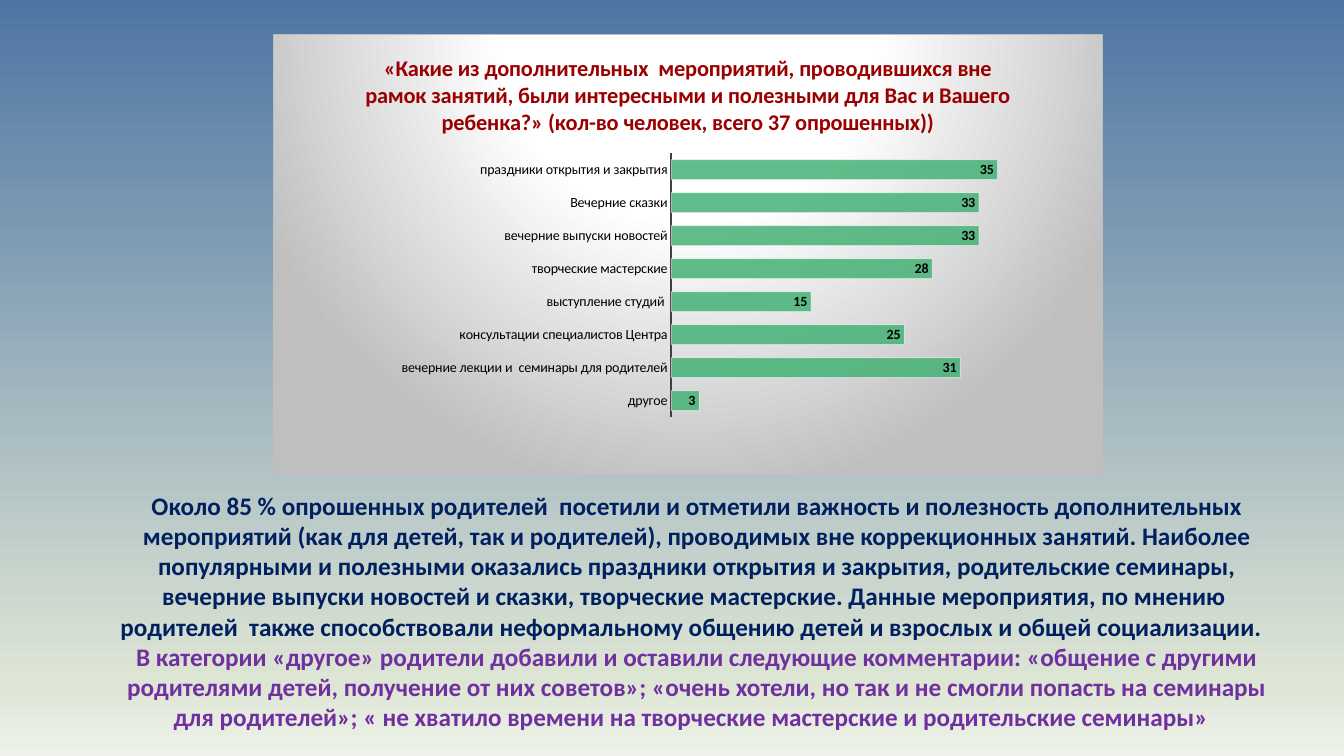
from lxml import etree
from pptx import Presentation
from pptx import util as u
from pptx.chart.data import CategoryChartData
from pptx.dml.color import RGBColor
from pptx.enum import chart as ch, text
from pptx.oxml import parse_xml
from pptx.oxml.ns import nsdecls, qn

# Content
TITLE = ("«Какие из дополнительных  мероприятий, проводившихся вне рамок занятий, "
         "были интересными и полезными для Вас и Вашего ребенка?» "
         "(кол-во человек, всего 37 опрошенных))")
VOTES = [
    ("другое", 3),
    ("вечерние лекции и  семинары для родителей", 31),
    ("консультации специалистов Центра", 25),
    ("выступление студий ", 15),
    ("творческие мастерские", 28),
    ("вечерние выпуски новостей", 33),
    ("Вечерние сказки", 33),
    ("праздники открытия и закрытия", 35),
]
NOTES = [
    ("Около 85 % опрошенных родителей  посетили и отметили важность и полезность "
     "дополнительных мероприятий (как для детей, так и родителей), проводимых вне "
     "коррекционных занятий. Наиболее популярными и полезными оказались праздники "
     "открытия и закрытия, родительские семинары, вечерние выпуски новостей и сказки, "
     "творческие мастерские. Данные мероприятия, по мнению  родителей  также "
     "способствовали неформальному общению детей и взрослых и общей социализации.  ",
     "navy"),
    ("В категории «другое» родители добавили и оставили следующие комментарии: "
     "«общение с другими родителями детей, получение от них советов»; «очень хотели, "
     "но так и не смогли попасть на семинары для родителей»; « не хватило времени на "
     "творческие мастерские и родительские семинары»  ", "violet"),
]


class Theme:
    face = "Calibri"
    color = {"navy": "002060", "violet": "7030A0", "red": "9A0000", "black": "000000",
             "green": "45B176", "axis": "404040", "white": "FFFFFF", "edge": "BFBFBF"}
    sky = [(0, "4E75A3"), (90, "DDE5D4"), (100, "EEF2EA")]
    glow = [(0, "FFFFFF"), (39, "FFFFFF"), (100, "BFBFBF")]
    head, body, label = 16, 18, 10


# Layout in px
SCALE = 914400 / 100.8
PAGE = (1344, 756)
CHART = (273, 34, 830, 441)
NOTE = (97, 485, 1200, 265)
PLOT = {"x": 0.48, "y": 0.27, "w": 0.45, "h": 0.6}


def emu(box):
    return [u.Emu(round(n * SCALE)) for n in box]


def rgb(name):
    return RGBColor.from_string(Theme.color[name])


def style(font, size, name, bold=False):
    font.name, font.size, font.bold = Theme.face, u.Pt(size), bold
    font.color.rgb = rgb(name)


def grad(stops, shade):
    marks = "".join(f'<a:gs pos="{pos * 1000}"><a:srgbClr val="{hue}"/></a:gs>'
                    for pos, hue in stops)
    return (f'<a:gradFill {nsdecls("a")} rotWithShape="1"><a:gsLst>{marks}</a:gsLst>'
            f'{shade}</a:gradFill>')


def fade(form, share):
    for hue in form.iter(qn("a:srgbClr")):
        etree.SubElement(hue, qn("a:alpha")).set("val", str(share * 1000))


deck = Presentation()
deck.slide_width, deck.slide_height = emu(PAGE)
slide = deck.slides.add_slide(deck.slide_layouts[6])

# Background
slide.background.fill.solid()
back = slide.element.find(".//" + qn("p:bgPr"))
back.replace(back[0], parse_xml(grad(Theme.sky, '<a:lin ang="5400000" scaled="0"/>')))

# Bar chart
data = CategoryChartData()
data.categories = [name for name, _ in VOTES]
data.add_series("Series 1", [count for _, count in VOTES])
chart = slide.shapes.add_chart(ch.XL_CHART_TYPE.BAR_CLUSTERED, *emu(CHART), data).chart
style(chart.font, Theme.label, "black")
chart.has_legend = False
chart.has_title = True
head = chart.chart_title.text_frame
head.text = TITLE
style(head.paragraphs[0].font, Theme.head, "red", True)
chart.chart_title.include_in_layout = False

# Axes
cats, vals = chart.category_axis, chart.value_axis
cats.major_tick_mark = ch.XL_TICK_MARK.NONE
cats.format.line.color.rgb = rgb("axis")
cats.format.line.width = u.Pt(1.5)
style(cats.tick_labels.font, Theme.label, "black")
vals.visible = vals.has_major_gridlines = False
vals.minimum_scale, vals.maximum_scale = 0, 40

# Bars and their labels
plot = chart.plots[0]
plot.gap_width = 65
plot.vary_by_categories = False
bars = plot.series[0]
bars.format.fill.solid()
bars.format.fill.fore_color.rgb = rgb("green")
bars.format.line.color.rgb = rgb("white")
bars.format.line.width = u.Pt(0.75)
form = bars.format.fill
shape = bars._element.find(qn("c:spPr"))
fade(shape.find(qn("a:solidFill")), 85)
fade(shape.find(qn("a:ln")), 50)
tags = bars.data_labels
tags.show_value = True
tags.position = ch.XL_LABEL_POSITION.INSIDE_END
style(tags.font, Theme.label, "black", True)

# Plot position and chart panel
area = chart.element.find(".//" + qn("c:plotArea"))
for old in area.findall(qn("c:layout")):
    area.remove(old)
modes = '<c:xMode val="edge"/><c:yMode val="edge"/>'
sizes = "".join(f'<c:{key} val="{val}"/>' for key, val in PLOT.items())
area.insert(0, parse_xml(
    f'<c:layout {nsdecls("c")}><c:manualLayout><c:layoutTarget val="inner"/>'
    f'{modes}{sizes}</c:manualLayout></c:layout>'))
halo = ('<a:path path="circle">'
        '<a:fillToRect l="50000" t="-80000" r="50000" b="180000"/></a:path>')
chart.element.find(qn("c:txPr")).addprevious(parse_xml(
    f'<c:spPr {nsdecls("c", "a")}>{grad(Theme.glow, halo)}<a:ln w="9525"><a:solidFill>'
    f'<a:srgbClr val="{Theme.color["edge"]}"/></a:solidFill></a:ln></c:spPr>'))

# Findings
frame = slide.shapes.add_textbox(*emu(NOTE)).text_frame
frame.word_wrap = True
for num, (words, hue) in enumerate(NOTES):
    para = frame.add_paragraph() if num else frame.paragraphs[0]
    para.text = words
    para.alignment = text.PP_ALIGN.CENTER
    style(para.font, Theme.body, hue, True)

deck.save("out.pptx")
